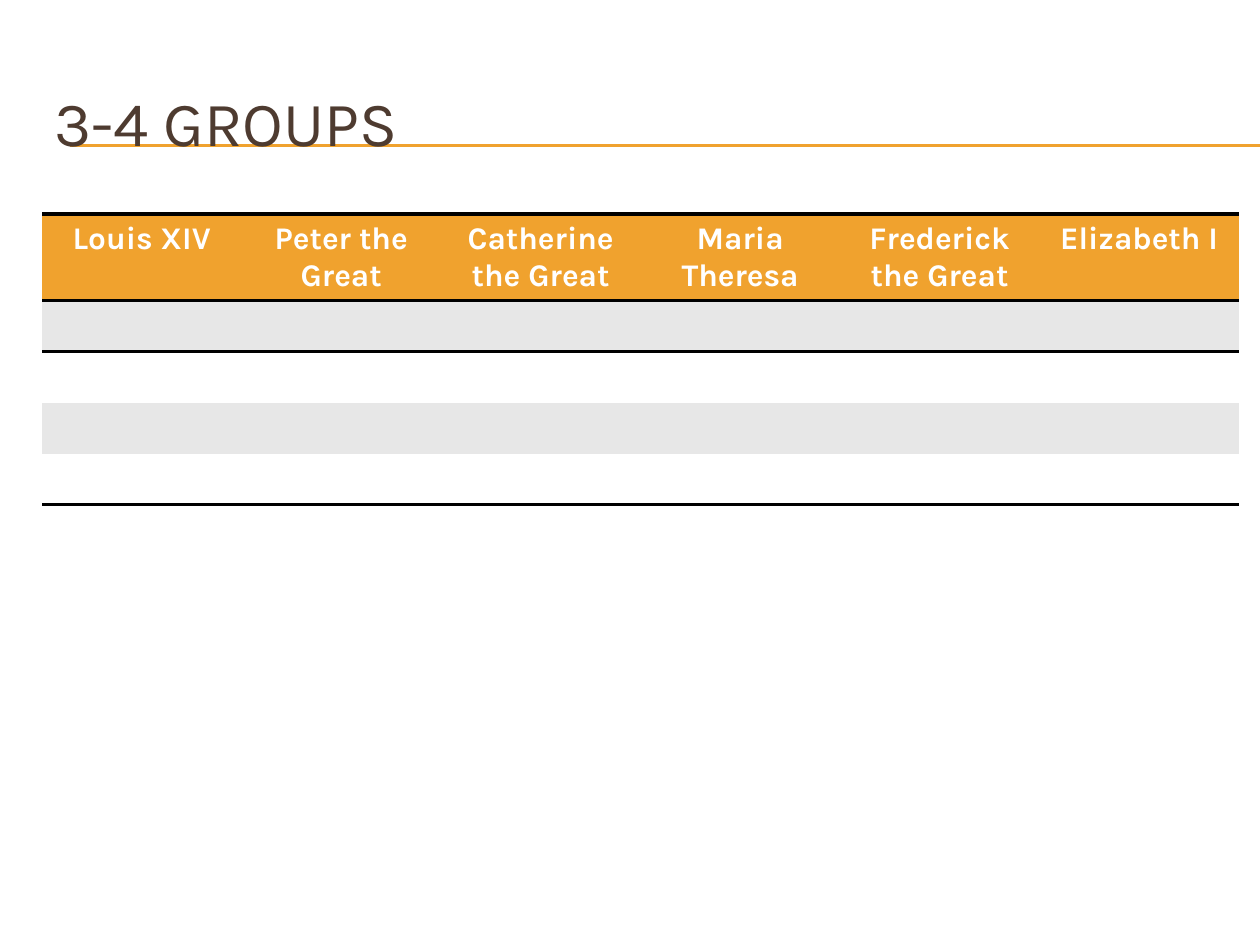
import lxml.etree
import pptx
import pptx.dml.color
import pptx.enum.shapes
import pptx.enum.text
import pptx.oxml.ns
import pptx.util

EMU_PER_PX = 914400 / 126
FONT = "Karla"
COLORS = {
    "gold": "F0A22E",
    "brown": "4E3B30",
    "white": "FFFFFF",
    "gray": "E7E7E7",
    "black": "000000",
}
PLAIN_TABLE_STYLE = "{2D5ABB26-0587-4C30-8999-92F81FD0307C}"
RULERS = [
    "Louis XIV",
    "Peter the Great",
    "Catherine the Great",
    "Maria Theresa",
    "Frederick the Great",
    "Elizabeth I",
]
ROW_COUNT = 5
HEADER_HEIGHT = 86
ROW_HEIGHT = 51


def px(length):
    return pptx.util.Emu(round(length * EMU_PER_PX))


def color(name):
    return pptx.dml.color.RGBColor.from_string(COLORS[name])


def add_span(para, text, size, color_name, bold=False):
    span = para.add_run()
    span.text = text
    span.font.name = FONT
    span.font.size = pptx.util.Pt(size)
    span.font.bold = bold
    span.font.color.rgb = color(color_name)


def format_title(page, text):
    title = page.shapes.title
    title.left, title.top, title.width, title.height = px(42), px(63), px(1197), px(116)
    frame = title.text_frame
    frame.word_wrap = True
    frame.auto_size = pptx.enum.text.MSO_AUTO_SIZE.NONE
    frame.vertical_anchor = pptx.enum.text.MSO_ANCHOR.MIDDLE
    para = frame.paragraphs[0]
    para.alignment = pptx.enum.text.PP_ALIGN.LEFT
    add_span(para, text, 36, "brown")


def add_title_rule(page, y):
    rule = page.shapes.add_connector(
        pptx.enum.shapes.MSO_CONNECTOR.STRAIGHT, px(70), px(y), px(1260), px(y)
    )
    rule.line.color.rgb = color("gold")
    rule.line.width = pptx.util.Pt(0.75)
    properties = rule.element.spPr
    lxml.etree.SubElement(properties, pptx.oxml.ns.qn("a:effectLst"))
    page.shapes.title.element.addprevious(rule.element)


def add_border(cell, side):
    qn = pptx.oxml.ns.qn
    properties = cell._tc.get_or_add_tcPr()
    border = lxml.etree.SubElement(properties, qn("a:" + side), w=str(pptx.util.Pt(2)))
    fill = lxml.etree.SubElement(border, qn("a:solidFill"))
    lxml.etree.SubElement(fill, qn("a:srgbClr"), val=COLORS["black"])


def format_cell(cell, fill_name, sides):
    for side in sides:
        add_border(cell, side)
    cell.fill.solid()
    cell.fill.fore_color.rgb = color(fill_name)
    para = cell.text_frame.paragraphs[0]
    para.font.size = pptx.util.Pt(18)
    para.alignment = pptx.enum.text.PP_ALIGN.CENTER


def add_ruler_table(page):
    width = px(1197)
    height = px(HEADER_HEIGHT + ROW_HEIGHT * (ROW_COUNT - 1))
    box = page.shapes.add_table(ROW_COUNT, len(RULERS), px(42), px(214), width, height)
    table = box.table
    table.horz_banding = False
    style = next(box.element.iter(pptx.oxml.ns.qn("a:tableStyleId")))
    style.text = PLAIN_TABLE_STYLE
    for column in table.columns:
        column.width = width // len(RULERS)
    for index, row in enumerate(table.rows):
        row.height = px(ROW_HEIGHT if index else HEADER_HEIGHT)
        fill_name, sides = ("gray" if index % 2 else "white"), []
        if index == 0:
            fill_name, sides = "gold", ["lnT", "lnB"]
        elif index == 1:
            sides = ["lnT"]
        elif index == ROW_COUNT - 1:
            sides = ["lnB"]
        for cell in row.cells:
            format_cell(cell, fill_name, sides)
    for cell, ruler in zip(table.rows[0].cells, RULERS):
        add_span(cell.text_frame.paragraphs[0], ruler, 18, "white", bold=True)


def main():
    deck = pptx.Presentation()
    deck.slide_width, deck.slide_height = px(1260), px(945)
    page = deck.slides.add_slide(deck.slide_layouts[5])
    page.background.fill.solid()
    page.background.fill.fore_color.rgb = color("white")
    format_title(page, "3-4 GROUPS")
    for y in (145, 146):
        add_title_rule(page, y)
    add_ruler_table(page)
    deck.save("out.pptx")


if __name__ == "__main__":
    main()
